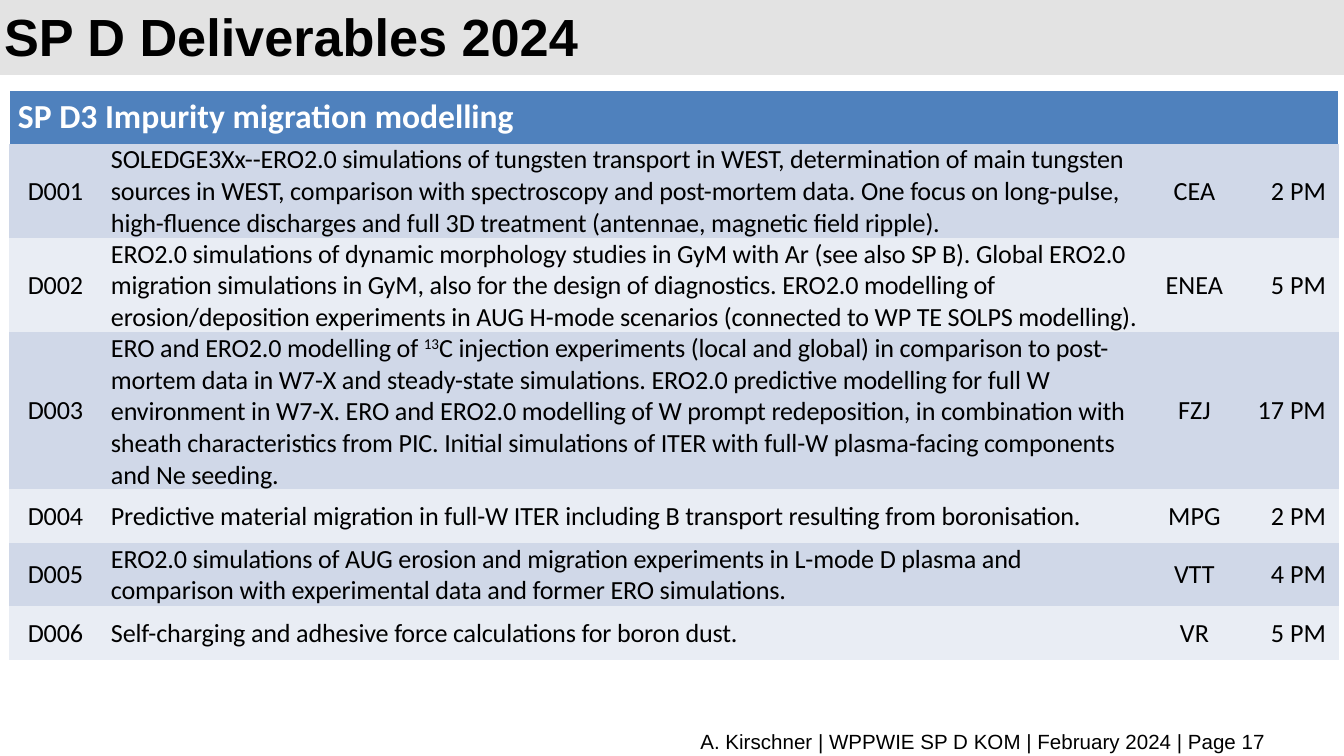
from lxml import etree
from pptx import Presentation
from pptx.dml.color import RGBColor
from pptx.enum.shapes import MSO_SHAPE
from pptx.enum.text import MSO_ANCHOR, PP_ALIGN
from pptx.oxml.ns import qn
from pptx.util import Pt

EMU_PER_PX = 914400 / 134.4
RECTANGLE = MSO_SHAPE.RECTANGLE
TOP, MIDDLE = MSO_ANCHOR.TOP, MSO_ANCHOR.MIDDLE
LEFT, CENTER, RIGHT = PP_ALIGN.LEFT, PP_ALIGN.CENTER, PP_ALIGN.RIGHT
PLAIN_TABLE_STYLE = "{2D5ABB26-0587-4C30-8999-92F81FD0307C}"

COLORS = {
    "banner": "E3E3E3",
    "header": "4F81BD",
    "odd_row": "D0D8E8",
    "even_row": "E9EDF4",
    "text": "000000",
    "white": "FFFFFF",
}

COLUMN_WIDTHS = [93, 1045, 95, 97]
COLUMN_ALIGNMENTS = [CENTER, LEFT, CENTER, RIGHT]
COLUMN_INSETS = [9, 9, 13, 13]
ROW_HEIGHT = 54

# Each description is a list of (text, superscript) runs.
DELIVERABLES = [
    ("D001", [("SOLEDGE3Xx--ERO2.0 simulations of tungsten transport in WEST, "
               "determination of main tungsten sources in WEST, comparison with "
               "spectroscopy and post-mortem data. One focus on long-pulse, "
               "high-fluence discharges and full 3D treatment (antennae, magnetic "
               "field ripple).", False)], "CEA", "2 PM"),
    ("D002", [("ERO2.0 simulations of dynamic morphology studies in GyM with Ar "
               "(see also SP B). Global ERO2.0 migration simulations in GyM, also "
               "for the design of diagnostics. ERO2.0 modelling of "
               "erosion/deposition experiments in AUG H-mode scenarios (connected "
               "to WP TE SOLPS modelling).", False)], "ENEA", "5 PM"),
    ("D003", [("ERO and ERO2.0 modelling of ", False),
              ("13", True),
              ("C injection experiments (local and global) in comparison to "
               "post-mortem data in W7-X and steady-state simulations. ERO2.0 "
               "predictive modelling for full W environment in W7-X. ERO and "
               "ERO2.0 modelling of W prompt redeposition, in combination with "
               "sheath characteristics from PIC. Initial simulations of ITER with "
               "full-W plasma-facing components and Ne seeding.", False)],
     "FZJ", "17 PM"),
    ("D004", [("Predictive material migration in full-W ITER including B transport "
               "resulting from boronisation.", False)], "MPG", "2 PM"),
    ("D005", [("ERO2.0 simulations of AUG erosion and migration experiments in "
               "L-mode D plasma and comparison with experimental data and former "
               "ERO simulations.", False)], "VTT", "4 PM"),
    ("D006", [("Self-charging and adhesive force calculations for boron dust.",
               False)], "VR", "5 PM"),
]


def px(length):
    return round(length * EMU_PER_PX)


def color(name):
    return RGBColor.from_string(COLORS[name])


def add_run(para, text, size, font="Calibri", color_name="text", bold=False):
    run = para.add_run()
    run.text = text
    run.font.name = font
    run.font.size = Pt(size)
    run.font.bold = bold
    run.font.color.rgb = color(color_name)
    return run


def add_banner(page):
    banner = page.shapes.add_shape(RECTANGLE, 0, 0, px(1344), px(75))
    banner.shadow.inherit = False
    banner.fill.solid()
    banner.fill.fore_color.rgb = color("banner")
    banner.line.fill.background()


def add_text(page, bounds, text, size, align=LEFT, anchor=TOP, bold=False):
    box = page.shapes.add_textbox(*map(px, bounds))
    frame = box.text_frame
    frame.word_wrap = True
    frame.vertical_anchor = anchor
    para = frame.paragraphs[0]
    para.alignment = align
    add_run(para, text, size, "Arial", bold=bold)
    return para


def prepare_cell(cell, fill_name, align, inset, anchor=MIDDLE):
    """Fill and lay out a cell, and return its paragraph."""
    cell.fill.solid()
    cell.fill.fore_color.rgb = color(fill_name)
    cell.vertical_anchor = anchor
    cell.margin_left = cell.margin_right = px(inset)
    cell.margin_top = cell.margin_bottom = 0
    para = cell.text_frame.paragraphs[0]
    para.alignment = align
    return para


def add_white_borders(cell):
    properties = cell._tc.get_or_add_tcPr()
    for index, side in enumerate(("lnL", "lnR", "lnT")):
        line = etree.Element(qn(f"a:{side}"), w=str(Pt(1)))
        fill = etree.SubElement(line, qn("a:solidFill"))
        etree.SubElement(fill, qn("a:srgbClr"), val=COLORS["white"])
        properties.insert(index, line)


def fill_header(table):
    cell = table.cell(0, 0)
    cell.merge(table.cell(0, len(COLUMN_WIDTHS) - 1))
    para = prepare_cell(cell, "header", LEFT, 9, TOP)
    para.line_spacing = 1.15
    add_run(para, "SP D3 Impurity migration modelling", 18,
            color_name="white", bold=True)
    add_white_borders(cell)


def fill_deliverable(table, row, deliverable):
    fill_name = "odd_row" if row % 2 else "even_row"
    for column, content in enumerate(deliverable):
        para = prepare_cell(table.cell(row, column), fill_name,
                            COLUMN_ALIGNMENTS[column], COLUMN_INSETS[column])
        runs = [(content, False)] if isinstance(content, str) else content
        for text, superscript in runs:
            properties = add_run(para, text, 14).font._element
            if column < 2:
                properties.set("spc", "-10")
            if superscript:
                properties.set("baseline", "30000")


def add_deliverables_table(page):
    row_count = len(DELIVERABLES) + 1
    frame = page.shapes.add_table(
        row_count, len(COLUMN_WIDTHS), px(9), px(90),
        px(sum(COLUMN_WIDTHS)), px(ROW_HEIGHT * row_count))
    table = frame.table
    table.first_row = table.horz_banding = False
    table._tbl.tblPr.find(qn("a:tableStyleId")).text = PLAIN_TABLE_STYLE
    for column, width in zip(table.columns, COLUMN_WIDTHS):
        column.width = px(width)
    for row in table.rows:
        row.height = px(ROW_HEIGHT)
    fill_header(table)
    for row, deliverable in enumerate(DELIVERABLES, start=1):
        fill_deliverable(table, row, deliverable)


def main():
    deck = Presentation()
    deck.slide_width, deck.slide_height = px(1344), px(756)
    page = deck.slides.add_slide(deck.slide_layouts[6])
    add_banner(page)
    title = add_text(page, (-9, 12, 1109, 51), "SP D Deliverables 2024", 28,
                     anchor=MIDDLE, bold=True)
    title.line_spacing = Pt(32)
    add_text(page, (69, 722, 1210, 30),
             "A. Kirschner | WPPWIE SP D KOM | February 2024 | Page 17", 11, RIGHT)
    add_deliverables_table(page)
    deck.save("out.pptx")


if __name__ == "__main__":
    main()
